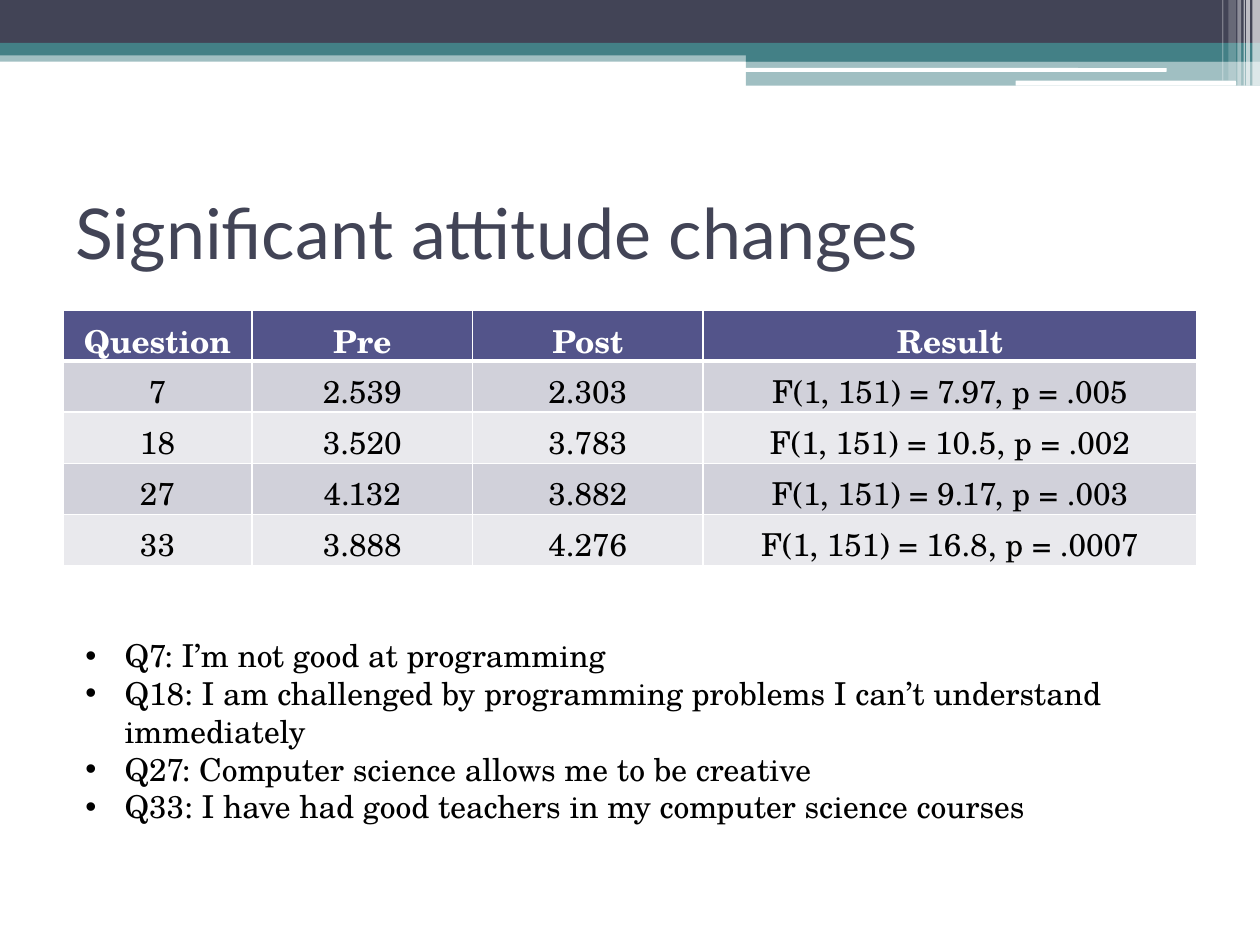
from lxml.etree import SubElement
from pptx import Presentation
from pptx.dml.color import RGBColor
from pptx.enum.shapes import MSO_SHAPE as Shape
from pptx.enum.text import MSO_ANCHOR as Anchor, MSO_AUTO_SIZE as AutoSize, PP_ALIGN as Align
from pptx.oxml.ns import qn
from pptx.util import Inches, Pt

DARK, TEAL, INDIGO, WHITE, BLACK = "424456", "438086", "53548A", "FFFFFF", "000000"
ROW_FILLS = ["D1D1DA", "E9E9ED"]
BANDS = [
    (0, 0.4, 10, 0.09, TEAL, 50),
    (0, 0, 10, 0.34, DARK, 100),
    (0, 0.34, 10, 0.1, TEAL, 100),
    (5.92, 0.39, 4.08, 0.1, TEAL, 100),
    (5.92, 0.48, 4.08, 0.2, TEAL, 50),
]
PILLS = [(5.91, 0.54, 3.35, 0.03), (8.06, 0.64, 1.75, 0.04)]
STRIPES = [
    (9.94, 0.06, 0.68, 65),
    (9.89, 0.03, 0.68, 65),
    (9.87, 0.01, 0.68, 60),
    (9.82, 0.03, 0.68, 40),
    (9.75, 0.06, 0.64, 20),
    (9.7, 0.01, 0.64, 30),
]
COLUMNS = [1.5, 1.75, 1.83, 3.92]
RESULTS = [
    ("Question", "Pre", "Post", "Result"),
    ("7", "2.539", "2.303", "F(1, 151) = 7.97, p = .005"),
    ("18", "3.520", "3.783", "F(1, 151) = 10.5, p = .002"),
    ("27", "4.132", "3.882", "F(1, 151) = 9.17, p = .003"),
    ("33", "3.888", "4.276", "F(1, 151) = 16.8, p = .0007"),
]
QUESTIONS = [
    "Q7: I’m not good at programming",
    "Q18: I am challenged by programming problems I can’t understand immediately",
    "Q27: Computer science allows me to be creative",
    "Q33: I have had good teachers in my computer science courses",
]


def color(value):
    return RGBColor.from_string(value)


class SlideBuilder:
    """Holds the text style and the current slide, and adds elements to it."""

    def __init__(self, presentation):
        self.slide = presentation.slides.add_slide(presentation.slide_layouts[6])
        self.body = {"name": "TeX Gyre Schola", "size": Pt(18), "bold": False}
        self.heading = {"name": "Lato", "size": Pt(40), "bold": False}

    def block(self, left, top, width, height, fill, opacity=100, kind=Shape.RECTANGLE):
        shape = self.slide.shapes.add_shape(
            kind, Inches(left), Inches(top), Inches(width), Inches(height))
        shape.shadow.inherit = False
        shape.fill.solid()
        shape.fill.fore_color.rgb = color(fill)
        shape.line.fill.background()
        if opacity < 100:
            rgb = shape._element.spPr.find(qn("a:solidFill"))[0]
            SubElement(rgb, qn("a:alpha"), val=str(opacity * 1000))

    def add_text(self, paragraph, text, style, ink):
        run = paragraph.add_run()
        run.text = text
        for name, value in style.items():
            setattr(run.font, name, value)
        run.font.color.rgb = color(ink)

    def text_box(self, left, top, width, height, **settings):
        box = self.slide.shapes.add_textbox(
            Inches(left), Inches(top), Inches(width), Inches(height))
        frame = box.text_frame
        frame.word_wrap = True
        for name, value in settings.items():
            setattr(frame, name, value)
        return frame

    def title(self, text, *place):
        frame = self.text_box(*place, vertical_anchor=Anchor.MIDDLE)
        self.add_text(frame.paragraphs[0], text, self.heading, DARK)

    def bullets(self, items, *place):
        frame = self.text_box(*place, auto_size=AutoSize.SHAPE_TO_FIT_TEXT)
        indent = Inches(0.31)
        for index, item in enumerate(items):
            paragraph = frame.add_paragraph() if index else frame.paragraphs[0]
            properties = paragraph._p.get_or_add_pPr()
            properties.set("marL", str(indent))
            properties.set("indent", str(-indent))
            SubElement(properties, qn("a:buFont"), typeface="Arial")
            SubElement(properties, qn("a:buChar"), char="•")
            self.add_text(paragraph, item, self.body, BLACK)

    def borders(self, cell, **widths):
        properties = cell._tc.get_or_add_tcPr()
        for side in "LRTB":
            width = Pt(widths.get(side, 1))
            line = SubElement(properties, qn(f"a:ln{side}"), w=str(width))
            SubElement(SubElement(line, qn("a:solidFill")), qn("a:srgbClr"), val=WHITE)

    def table(self, rows, columns, left, top, height):
        table = self.slide.shapes.add_table(
            len(rows), len(columns), Inches(left), Inches(top),
            Inches(sum(columns)), Inches(height)).table
        for column, width in zip(table.columns, columns):
            column.width = Inches(width)
        for row_index, row in enumerate(rows):
            header = row_index == 0
            fill = INDIGO if header else ROW_FILLS[(row_index - 1) % 2]
            for column_index, text in enumerate(row):
                cell = table.cell(row_index, column_index)
                self.borders(cell, T=3 if row_index == 1 else 1, B=3 if header else 1)
                cell.fill.solid()
                cell.fill.fore_color.rgb = color(fill)
                paragraph = cell.text_frame.paragraphs[0]
                paragraph.alignment = Align.CENTER
                self.add_text(paragraph, text, {**self.body, "bold": header},
                              WHITE if header else BLACK)


def main():
    presentation = Presentation()
    presentation.slide_width = Inches(10)
    presentation.slide_height = Inches(7.5)
    builder = SlideBuilder(presentation)
    for band in BANDS:
        builder.block(*band)
    for pill in PILLS:
        builder.block(*pill, WHITE, kind=Shape.ROUNDED_RECTANGLE)
    for left, width, height, opacity in STRIPES:
        builder.block(left, 0, width, height, WHITE, opacity)
    builder.title("Significant attitude changes", 0.5, 1.25, 9, 1.17)
    builder.table(RESULTS, COLUMNS, 0.5, 2.46, 2.03)
    builder.bullets(QUESTIONS, 0.58, 5, 8.92, 1.62)
    presentation.save("out.pptx")


if __name__ == "__main__":
    main()
